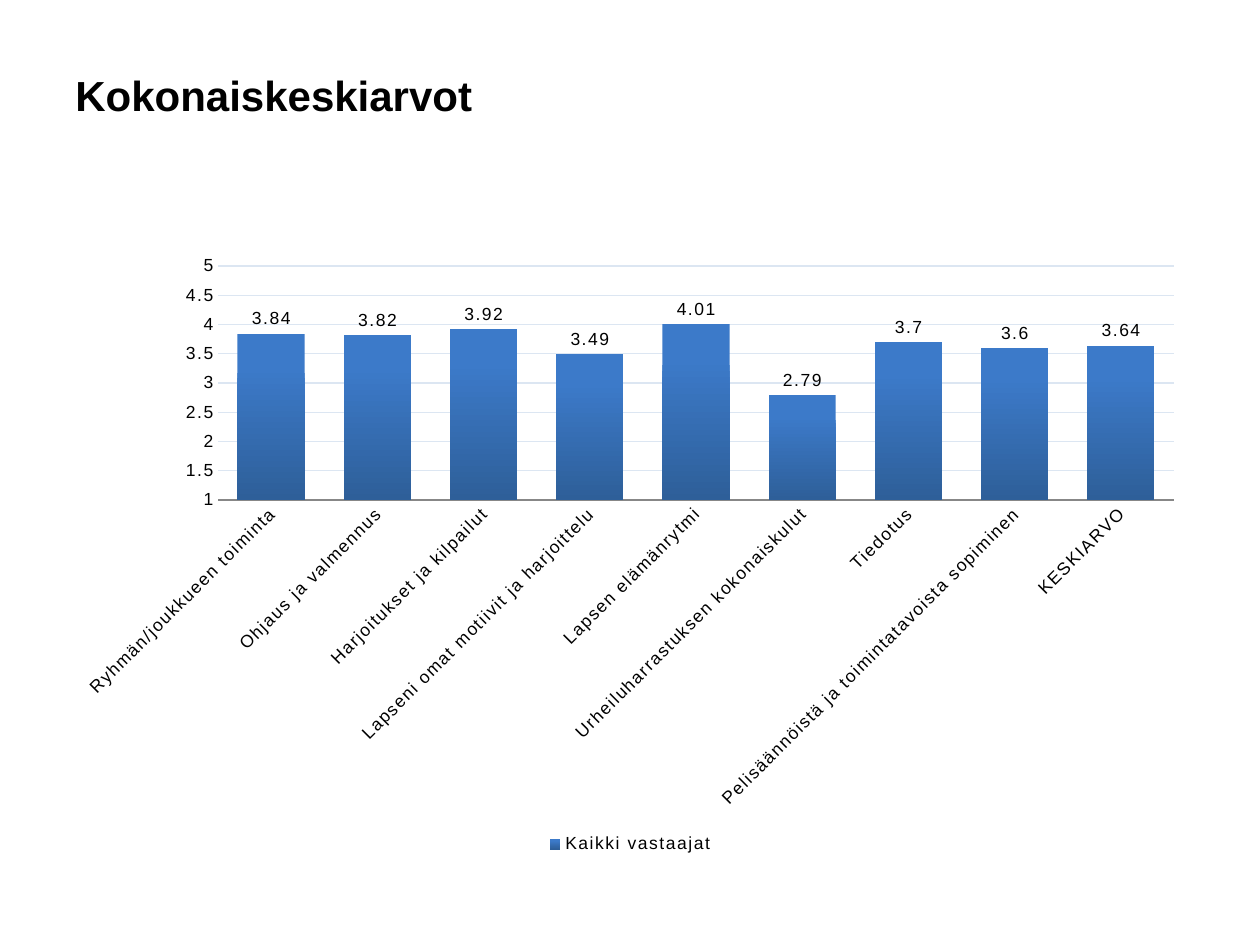
"""Build a slide with a column chart of overall survey averages."""
from dataclasses import dataclass
from typing import NamedTuple

from pptx import Presentation
from pptx.chart.chart import Chart
from pptx.chart.data import CategoryChartData as ChartData
from pptx.dml.color import RGBColor as Rgb
from pptx.enum.chart import XL_CHART_TYPE as ChartType
from pptx.enum.chart import XL_LABEL_POSITION as LabelPosition
from pptx.enum.chart import XL_LEGEND_POSITION as LegendPosition
from pptx.enum.chart import XL_TICK_MARK as TickMark
from pptx.enum.text import MSO_ANCHOR as Anchor
from pptx.oxml import parse_xml
from pptx.oxml.ns import nsdecls, qn
from pptx.slide import Slide
from pptx.text.text import Font
from pptx.util import Emu, Pt

EMU_PER_PX = 914400 // 126


@dataclass(frozen=True)
class Theme:
    font: str = "Arial"
    ink: Rgb = Rgb(0, 0, 0)
    bar_top: Rgb = Rgb(0x3C, 0x7A, 0xC9)
    bar_bottom: Rgb = Rgb(0x2E, 0x5F, 0x99)
    grid: Rgb = Rgb(0xDC, 0xE6, 0xF2)
    axis: Rgb = Rgb(0x87, 0x87, 0x87)
    title_size: int = 24
    chart_size: int = 10
    letter_spacing: int = 100


class Area(NamedTuple):
    left: int
    top: int
    width: int
    height: int

    def emu(self) -> list[Emu]:
        return [Emu(length * EMU_PER_PX) for length in self]


class Score(NamedTuple):
    topic: str
    average: float


THEME = Theme()
SLIDE = Area(0, 0, 1260, 945)
TITLE = Area(63, 45, 1134, 100)
CHART = Area(63, 244, 1134, 615)
PLOT = Area(218, 266, 956, 234)
SCORES = [
    Score("Ryhmän/joukkueen toiminta", 3.84),
    Score("Ohjaus ja valmennus", 3.82),
    Score("Harjoitukset ja kilpailut", 3.92),
    Score("Lapseni omat motiivit ja harjoittelu", 3.49),
    Score("Lapsen elämänrytmi", 4.01),
    Score("Urheiluharrastuksen kokonaiskulut", 2.79),
    Score("Tiedotus", 3.7),
    Score("Pelisäännöistä ja toimintatavoista sopiminen", 3.6),
    Score("KESKIARVO", 3.64),
]


def style_font(font: Font, size: int, bold: bool = False) -> None:
    font.name = THEME.font
    font.size = Pt(size)
    font.bold = bold
    font.color.rgb = THEME.ink


def add_title(page: Slide, text: str) -> None:
    frame = page.shapes.add_textbox(*TITLE.emu()).text_frame
    frame.word_wrap = True
    frame.vertical_anchor = Anchor.MIDDLE
    frame.text = text
    style_font(frame.paragraphs[0].runs[0].font, THEME.title_size, bold=True)


def style_axes(chart: Chart) -> None:
    values, topics = chart.value_axis, chart.category_axis
    for axis in (values, topics):
        axis.major_tick_mark = axis.minor_tick_mark = TickMark.NONE
        style_font(axis.tick_labels.font, THEME.chart_size)
    values.minimum_scale, values.maximum_scale, values.major_unit = 1, 5, 0.5
    values.tick_labels.number_format = "General"
    values.tick_labels.number_format_is_linked = False
    values.format.line.fill.background()
    grid = values.major_gridlines.format.line
    grid.color.rgb = THEME.grid
    grid.width = Pt(0.75)
    topics.format.line.color.rgb = THEME.axis
    topics.format.line.width = Pt(1)
    for body in topics.tick_labels.font and topics._element.iter(qn("a:bodyPr")):
        body.set("rot", "-2700000")
        body.set("vert", "horz")


def style_bars(chart: Chart) -> None:
    plot = chart.plots[0]
    plot.gap_width = 58
    plot.vary_by_categories = False
    fill = plot.series[0].format.fill
    fill.gradient()
    fill.gradient_angle = 270
    top, bottom = fill.gradient_stops
    top.color.rgb, top.position = THEME.bar_top, 0.2
    bottom.color.rgb, bottom.position = THEME.bar_bottom, 1
    plot.has_data_labels = True
    labels = plot.data_labels
    labels.show_value = True
    labels.number_format = "General"
    labels.number_format_is_linked = False
    labels.position = LabelPosition.OUTSIDE_END
    style_font(labels.font, THEME.chart_size)


def place_plot(chart: Chart) -> None:
    shares = {
        "x": (PLOT.left - CHART.left) / CHART.width,
        "y": (PLOT.top - CHART.top) / CHART.height,
        "w": PLOT.width / CHART.width,
        "h": PLOT.height / CHART.height,
    }
    modes = '<c:layoutTarget val="inner"/><c:xMode val="edge"/><c:yMode val="edge"/>'
    sizes = "".join(f'<c:{key} val="{share:.4f}"/>' for key, share in shares.items())
    area = next(chart.element.iter(qn("c:plotArea")))
    for layout in area.findall(qn("c:layout")):
        area.remove(layout)
    area.insert(0, parse_xml(
        f'<c:layout {nsdecls("c")}><c:manualLayout>{modes}{sizes}</c:manualLayout></c:layout>'
    ))


def add_score_chart(page: Slide, name: str, scores: list[Score]) -> None:
    data = ChartData()
    data.categories = [score.topic for score in scores]
    data.add_series(name, [score.average for score in scores])
    chart = page.shapes.add_chart(ChartType.COLUMN_CLUSTERED, *CHART.emu(), data).chart
    chart.has_title = False
    style_font(chart.font, THEME.chart_size)
    style_axes(chart)
    style_bars(chart)
    chart.has_legend = True
    chart.legend.position = LegendPosition.BOTTOM
    chart.legend.include_in_layout = False
    style_font(chart.legend.font, THEME.chart_size)
    place_plot(chart)
    for properties in chart.element.iter(qn("a:defRPr")):
        properties.set("spc", str(THEME.letter_spacing))


def main() -> None:
    deck = Presentation()
    _, _, deck.slide_width, deck.slide_height = SLIDE.emu()
    page = deck.slides.add_slide(deck.slide_layouts[6])
    add_title(page, "Kokonaiskeskiarvot")
    add_score_chart(page, "Kaikki vastaajat", SCORES)
    deck.save("out.pptx")


if __name__ == "__main__":
    main()
